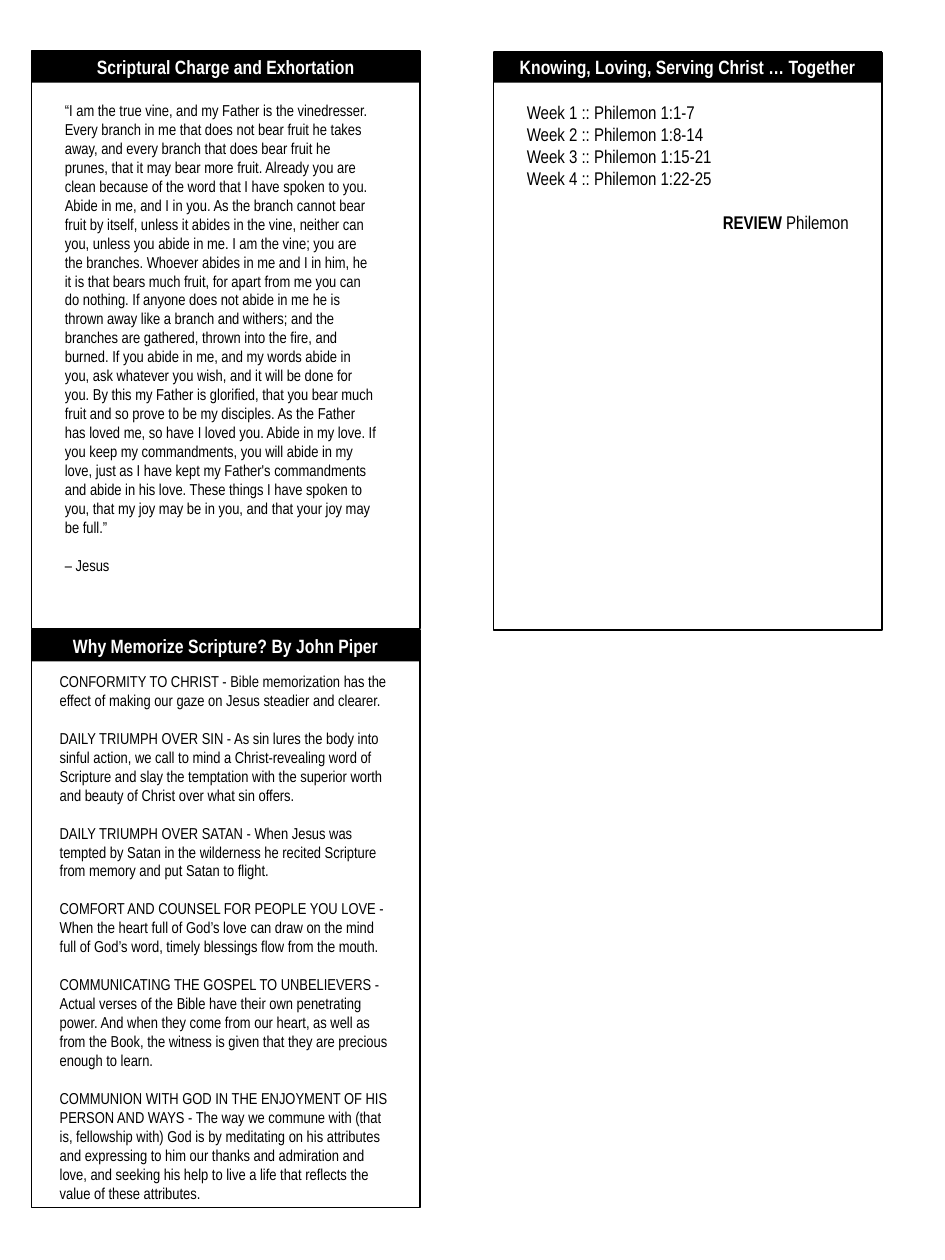
import dataclasses

import pptx
import pptx.dml.color
import pptx.enum.shapes
import pptx.enum.text
import pptx.util

EMU_PER_PX = 9525
FONT = "Arial Narrow"
COLOURS = {"ink": "000000", "paper": "FFFFFF"}
PANEL_WIDTH, PANEL_HEIGHT, BANNER_HEIGHT = 296, 440, 24
ALIGN = pptx.enum.text.PP_ALIGN


@dataclasses.dataclass(frozen=True)
class Panel:
    title: str
    left: int
    banner_top: int
    frame_top: int


@dataclasses.dataclass(frozen=True)
class Passage:
    left: int
    top: int
    width: int
    height: int
    size: float
    gap: float
    lines: tuple[str, ...]
    spaced: tuple[int, ...]


PANELS = (
    Panel("Scriptural Charge and Exhortation", 24, 39, 39),
    Panel("Knowing, Loving, Serving Christ … Together", 376, 39, 40),
    Panel("Why Memorize Scripture? By John Piper", 24, 480, 480),
)

VINE_SENTENCES = (
    "“I am the true vine, and my Father is the vinedresser.",
    "Every branch in me that does not bear fruit he takes away, and every branch that does "
    "bear fruit he prunes, that it may bear more fruit.",
    "Already you are clean because of the word that I have spoken to you.",
    "Abide in me, and I in you.",
    "As the branch cannot bear fruit by itself, unless it abides in the vine, neither can "
    "you, unless you abide in me.",
    "I am the vine; you are the branches.",
    "Whoever abides in me and I in him, he it is that bears much fruit, for apart from me "
    "you can do nothing.",
    "If anyone does not abide in me he is thrown away like a branch and withers; and the "
    "branches are gathered, thrown into the fire, and burned.",
    "If you abide in me, and my words abide in you, ask whatever you wish, and it will be "
    "done for you.",
    "By this my Father is glorified, that you bear much fruit and so prove to be my "
    "disciples.",
    "As the Father has loved me, so have I loved you.",
    "Abide in my love.",
    "If you keep my commandments, you will abide in my love, just as I have kept my "
    "Father's commandments and abide in his love.",
    "These things I have spoken to you, that my joy may be in you, and that your joy may "
    "be full.”",
)

VINE = Passage(40, 72, 256, 373, 9, 10.85, (" ".join(VINE_SENTENCES), "– Jesus"), (1,))

WEEKS = Passage(392, 72, 264, 111, 10.5, 12.6, (
    "Week 1 :: Philemon 1:1-7",
    "Week 2 :: Philemon 1:8-14",
    "Week 3 :: Philemon 1:15-21",
    "Week 4 :: Philemon 1:22-25",
    "REVIEW ",
), (4,))

REASONS = Passage(36, 507, 272, 417, 9, 10.85, (
    "CONFORMITY TO CHRIST - Bible memorization has the effect of making our gaze on Jesus "
    "steadier and clearer.",
    "DAILY TRIUMPH OVER SIN - As sin lures the body into sinful action, we call to mind a "
    "Christ-revealing word of Scripture and slay the temptation with the superior worth and "
    "beauty of Christ over what sin offers.",
    "DAILY TRIUMPH OVER SATAN - When Jesus was tempted by Satan in the wilderness he recited "
    "Scripture from memory and put Satan to flight.",
    "COMFORT AND COUNSEL FOR PEOPLE YOU LOVE - When the heart full of God’s love can draw on "
    "the mind full of God’s word, timely blessings flow from the mouth.",
    "COMMUNICATING THE GOSPEL TO UNBELIEVERS - Actual verses of the Bible have their own "
    "penetrating power. And when they come from our heart, as well as from the Book, the "
    "witness is given that they are precious enough to learn.",
    "COMMUNION WITH GOD IN THE ENJOYMENT OF HIS PERSON AND WAYS - The way we commune with "
    "(that is, fellowship with) God is by meditating on his attributes and expressing to him "
    "our thanks and admiration and love, and seeking his help to live a life that reflects "
    "the value of these attributes.",
), (1, 2, 3, 4, 5))


def px(length: int) -> pptx.util.Emu:
    return pptx.util.Emu(length * EMU_PER_PX)


def colour(name: str) -> pptx.dml.color.RGBColor:
    return pptx.dml.color.RGBColor.from_string(COLOURS[name])


def style_span(span, size: float, ink: str, bold: bool = False) -> None:
    span.font.name = FONT
    span.font.size = pptx.util.Pt(size)
    span.font.bold = bold
    span.font.color.rgb = colour(ink)


def add_rectangle(page, left: int, top: int, height: int):
    box = page.shapes.add_shape(
        pptx.enum.shapes.MSO_SHAPE.RECTANGLE,
        px(left), px(top), px(PANEL_WIDTH), px(height),
    )
    box.shadow.inherit = False
    return box


def draw_panel(page, panel: Panel) -> None:
    banner = add_rectangle(page, panel.left, panel.banner_top, BANNER_HEIGHT)
    banner.fill.solid()
    banner.fill.fore_color.rgb = colour("ink")
    banner.line.fill.background()
    frame = banner.text_frame
    frame.text = panel.title
    frame.vertical_anchor = pptx.enum.text.MSO_ANCHOR.MIDDLE
    para = frame.paragraphs[0]
    para.alignment = ALIGN.CENTER
    style_span(para.runs[0], 11, "paper", bold=True)

    border = add_rectangle(page, panel.left, panel.frame_top, PANEL_HEIGHT)
    border.fill.background()
    border.line.color.rgb = colour("ink")
    border.line.width = pptx.util.Pt(0.75)


def draw_passage(page, passage: Passage):
    box = page.shapes.add_textbox(
        px(passage.left), px(passage.top), px(passage.width), px(passage.height)
    )
    frame = box.text_frame
    frame.word_wrap = True
    frame.auto_size = pptx.enum.text.MSO_AUTO_SIZE.SHAPE_TO_FIT_TEXT
    frame.text = "\n".join(passage.lines)
    for index, para in enumerate(frame.paragraphs):
        if index in passage.spaced:
            para.space_before = pptx.util.Pt(passage.gap)
        for span in para.runs:
            style_span(span, passage.size, "ink")
    return box


def main() -> None:
    deck = pptx.Presentation()
    deck.slide_width, deck.slide_height = px(720), px(960)
    page = deck.slides.add_slide(deck.slide_layouts[6])
    for panel in PANELS:
        draw_panel(page, panel)
    draw_passage(page, VINE)
    weeks = draw_passage(page, WEEKS)
    draw_passage(page, REASONS)

    review = weeks.text_frame.paragraphs[-1]
    review.alignment = ALIGN.RIGHT
    review.runs[0].font.bold = True
    book = review.add_run()
    book.text = "Philemon"
    style_span(book, WEEKS.size, "ink")
    deck.save("out.pptx")


if __name__ == "__main__":
    main()
